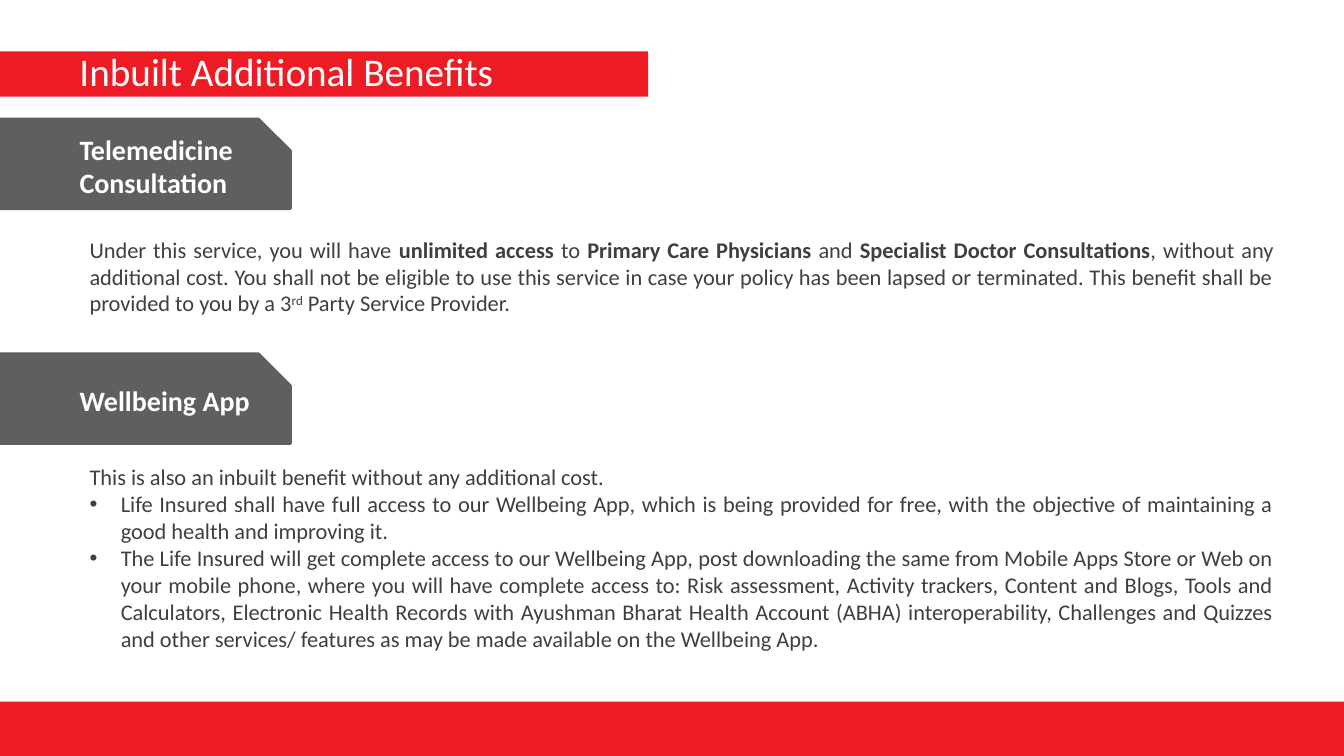
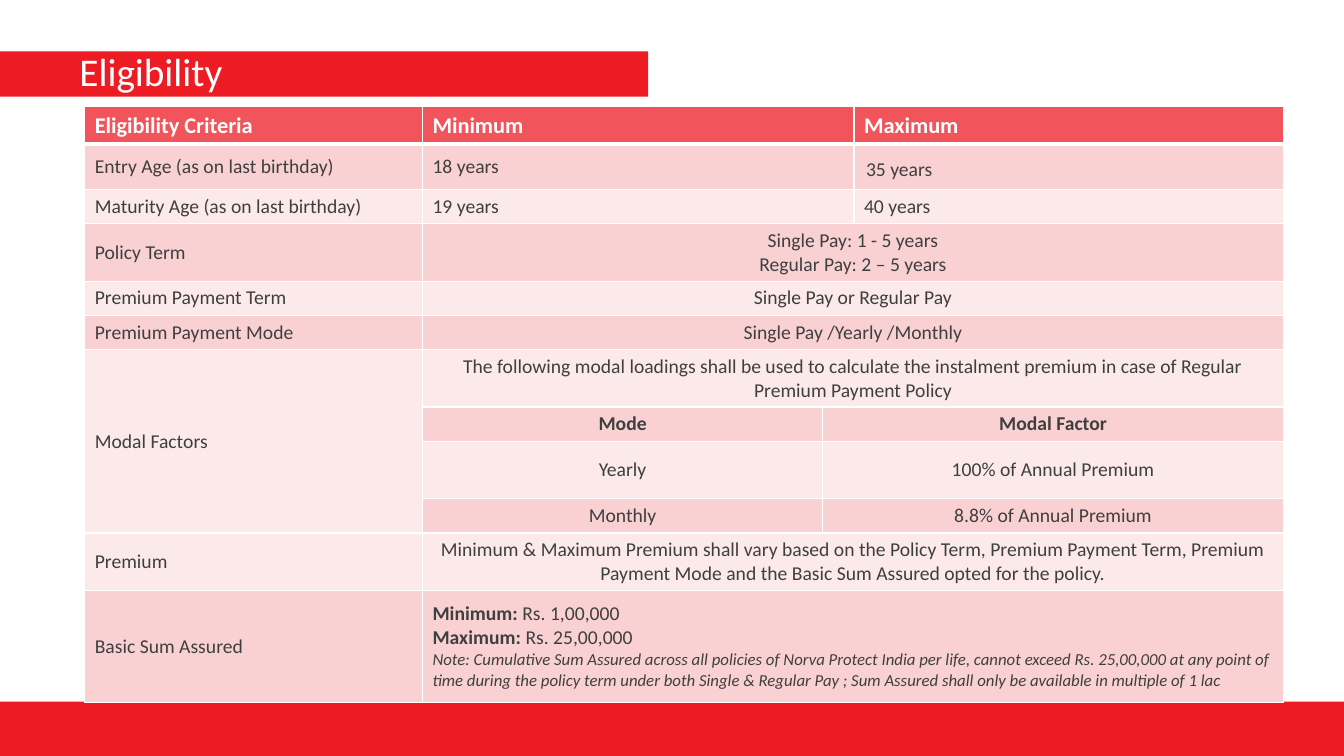
from pptx import Presentation
from pptx.dml.color import RGBColor
from pptx.enum.shapes import MSO_SHAPE
from pptx.enum.text import MSO_ANCHOR, PP_ALIGN
from pptx.oxml.ns import qn
from pptx.util import Inches, Pt
from lxml import etree

RECT, SNIP = MSO_SHAPE.RECTANGLE, MSO_SHAPE.SNIP_1_RECTANGLE
TOP, MIDDLE = MSO_ANCHOR.TOP, MSO_ANCHOR.MIDDLE
LEFT, CENTER, JUSTIFY = PP_ALIGN.LEFT, PP_ALIGN.CENTER, PP_ALIGN.JUSTIFY

FONT = "Calibri"
RED, GREY, INK, WHITE = "ED1C24", "5F5F5F", "3F3F3F", "FFFFFF"
HEAD, DARK, LIGHT = "F2545C", "FAD1D2", "FCE9EA"
WIDE, HIGH = 13.33, 7.5
TEXT_X = 0.69

TELE = [[
    ("Under this service, you will have ", ""),
    ("unlimited access ", "b"),
    ("to ", ""),
    ("Primary Care Physicians ", "b"),
    ("and ", ""),
    ("Specialist Doctor Consultations", "b"),
    (", without any additional cost. You shall not be eligible to use this "
     "service in case your policy has been lapsed or terminated. This benefit "
     "shall be provided to you by a 3", ""),
    ("rd", "s"),
    (" Party Service Provider. ", ""),
]]
APP_INTRO = "This is also an inbuilt benefit without any additional cost. "
APP_LIST = [
    "Life Insured shall have full access to our Wellbeing App, which is being "
    "provided for free, with the objective of maintaining a good health and "
    "improving it. ",
    "The Life Insured will get complete access to our Wellbeing App, post "
    "downloading the same from Mobile Apps Store or Web on your mobile phone, "
    "where you will have complete access to: Risk assessment, Activity "
    "trackers, Content and Blogs, Tools and Calculators, Electronic Health "
    "Records with Ayushman Bharat Health Account (ABHA) interoperability, "
    "Challenges and Quizzes and other services/ features as may be made "
    "available on the Wellbeing App.",
]

COLS = [3.35, 3.97, 0.31, 4.26]
ONE, TWO = 0.34, 0.57
ROWS = [
    (0.37, {0: "Eligibility Criteria", 1: "Minimum", 3: "Maximum"}),
    (0.45, {0: "Entry Age (as on last birthday)", 1: "18 years", 3: "35 years"}),
    (ONE, {0: "Maturity Age (as on last birthday)", 1: "19 years", 3: "40 years"}),
    (TWO, {0: "Policy Term",
           1: ["Single Pay: 1 - 5 years", "Regular Pay: 2 – 5 years"]}),
    (ONE, {0: "Premium Payment Term", 1: "Single Pay or Regular Pay"}),
    (ONE, {0: "Premium Payment Mode", 1: "Single Pay /Yearly /Monthly"}),
    (TWO, {0: "Modal Factors",
           1: "The following modal loadings shall be used to calculate the "
              "instalment premium in case of Regular Premium Payment Policy"}),
    (ONE, {1: [[("Mode", "b")]], 2: [[("Modal Factor", "b")]]}),
    (TWO, {1: "Yearly", 2: "100% of Annual Premium"}),
    (ONE, {1: "Monthly", 2: "8.8% of Annual Premium"}),
    (TWO, {0: "Premium",
           1: "Minimum & Maximum Premium shall vary based on the Policy Term, "
              "Premium Payment Term, Premium Payment Mode and the Basic Sum "
              "Assured opted for the policy."}),
    (1.11, {0: "Basic Sum Assured",
            1: [[("Minimum: ", "b"), ("Rs. 1,00,000", "")],
                [("Maximum: ", "b"), ("Rs. 25,00,000", "")]]}),
]
MODAL = 6
NOTE = ("Note: Cumulative Sum Assured across all policies of Norva Protect India "
        "per life, cannot exceed Rs. 25,00,000 at any point of time during the "
        "policy term under both Single & Regular Pay ; Sum Assured shall only be "
        "available in multiple of 1 lac")


def rgb(code):
    return RGBColor.from_string(code)


def style(para, size, color, bold=False, align=LEFT):
    para.alignment = align
    font = para.font
    font.name, font.size, font.bold = FONT, Pt(size), bold
    font.color.rgb = rgb(color)


def write(frame, paras, *look, **more):
    if isinstance(paras, str):
        paras = [paras]
    for i, parts in enumerate(paras):
        para = frame.add_paragraph() if i else frame.paragraphs[0]
        if isinstance(parts, str):
            parts = [(parts, "")]
        for text, mark in parts:
            run = para.add_run()
            run.text = text
            if mark == "b":
                run.font.bold = True
            elif mark == "s":
                run.font.size = Pt(look[0])
                run._r.get_or_add_rPr().set("baseline", "30000")
        style(para, *look, **more)


def bullet(para):
    props = para._p.get_or_add_pPr()
    props.set("marL", str(Inches(0.31)))
    props.set("indent", str(-Inches(0.31)))
    face = etree.Element(qn("a:buFont"), typeface="Arial")
    mark = etree.Element(qn("a:buChar"), char="•")
    props.insert_element_before(face, "a:tabLst", "a:defRPr", "a:extLst")
    props.insert_element_before(mark, "a:tabLst", "a:defRPr", "a:extLst")


def block(slide, kind, box, color):
    shape = slide.shapes.add_shape(kind, *map(Inches, box))
    shape.shadow.inherit = False
    shape.fill.solid()
    shape.fill.fore_color.rgb = rgb(color)
    shape.line.fill.background()
    return shape


def label(slide, box, anchor=TOP):
    frame = slide.shapes.add_textbox(*map(Inches, box)).text_frame
    frame.word_wrap = True
    frame.vertical_anchor = anchor
    return frame


def base(deck, title):
    slide = deck.slides.add_slide(deck.slide_layouts[6])
    block(slide, RECT, (0, 6.96, WIDE, 0.54), RED)
    block(slide, RECT, (0, 0.51, 6.43, 0.45), RED)
    write(label(slide, (TEXT_X, 0.32, 9.36, 0.77), MIDDLE), title, 28, WHITE)
    return slide


def tag(slide, top, text):
    shape = block(slide, SNIP, (0, top, 2.88, 0.89), GREY)
    shape.adjustments[0] = 0.356
    shape.line.color.rgb = rgb(GREY)
    shape.line.width = Pt(2)
    frame = label(slide, (TEXT_X, top + 0.02, 2.28, 0.89), MIDDLE)
    write(frame, text, 20, WHITE, bold=True)


def body(slide, top, height, paras):
    frame = label(slide, (0.79, top, 11.94, height))
    write(frame, paras, 16, INK, align=JUSTIFY)
    return frame


def edge(cell, **widths):
    props = cell._tc.get_or_add_tcPr()
    for side in "LRTB":
        line = etree.SubElement(props, qn("a:ln" + side),
                                w=str(Pt(widths.get(side, 1))))
        fill = etree.SubElement(line, qn("a:solidFill"))
        etree.SubElement(fill, qn("a:srgbClr"), val=WHITE)


def paint(cell, row):
    edge(cell, **{0: {"B": 3}, 1: {"T": 3}}.get(row, {}))
    cell.fill.solid()
    tone = DARK if row % 2 else LIGHT
    cell.fill.fore_color.rgb = rgb(tone if row else HEAD)
    cell.vertical_anchor = MIDDLE if row else TOP


def grid(slide, left, top):
    high = sum(height for height, _ in ROWS)
    frame = slide.shapes.add_table(len(ROWS), len(COLS), Inches(left), Inches(top),
                                   Inches(sum(COLS)), Inches(high))
    table = frame.table
    table.first_row = table.horz_banding = False
    for col, width in zip(table.columns, COLS):
        col.width = Inches(width)
    for r, (height, texts) in enumerate(ROWS):
        table.rows[r].height = Inches(height)
        for c in range(len(COLS)):
            paint(table.cell(r, c), r)
        starts = sorted(texts)
        for c, after in zip(starts, starts[1:] + [len(COLS)]):
            cell = table.cell(r, c)
            if after - c > 1:
                cell.merge(table.cell(r, after - 1))
            mid = c and 3 not in texts and r < len(ROWS) - 1
            write(cell.text_frame, texts[c], 14 if r else 16, INK if r else WHITE,
                  bold=not r, align=CENTER if mid else LEFT)
    table.cell(MODAL, 0).merge(table.cell(MODAL + 3, 0))
    age = table.cell(1, 3)
    age.margin_left = age.margin_right = Inches(0.12)
    age.margin_top = age.margin_bottom = 0
    age.text_frame.paragraphs[0].line_spacing = 1.25
    note = table.cell(len(ROWS) - 1, 1).text_frame.add_paragraph()
    note.text = NOTE
    style(note, 12, INK)
    note.font.italic = True


def benefits(deck):
    slide = base(deck, "Inbuilt Additional Benefits")
    tag(slide, 1.18, "Telemedicine Consultation")
    body(slide, 2.29, 0.91, TELE)
    tag(slide, 3.51, "Wellbeing App")
    frame = body(slide, 4.55, 1.99, [APP_INTRO] + APP_LIST)
    for para in frame.paragraphs[1:]:
        bullet(para)


def criteria(deck):
    grid(base(deck, "Eligibility"), 0.84, 1.06)


def main():
    deck = Presentation()
    deck.slide_width, deck.slide_height = Inches(WIDE), Inches(HIGH)
    benefits(deck)
    criteria(deck)
    deck.save("out.pptx")


if __name__ == "__main__":
    main()
